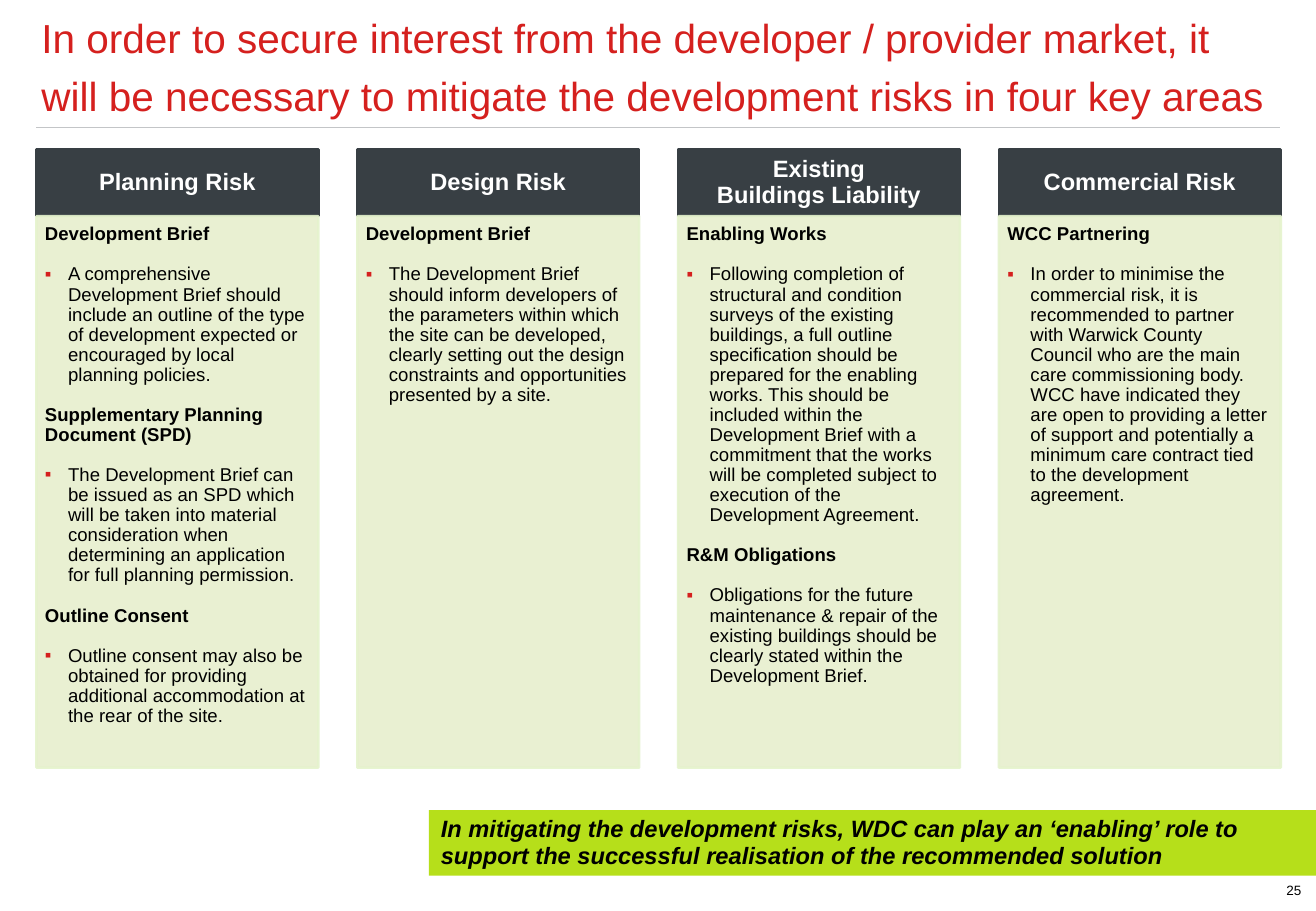
from lxml.etree import SubElement
from pptx import Presentation
from pptx.dml.color import RGBColor
from pptx.enum.shapes import MSO_CONNECTOR, MSO_SHAPE
from pptx.enum.text import MSO_ANCHOR, PP_ALIGN
from pptx.oxml.ns import qn
from pptx.util import Inches, Pt

RED = RGBColor(0xD5, 0x20, 0x1E)
SLATE = RGBColor(0x38, 0x3F, 0x44)
PALE = RGBColor(0xE1, 0xEB, 0xC0)
EDGE = RGBColor(0xE5, 0xF3, 0xCD)
LIME = RGBColor(0xB6, 0xDF, 0x1A)
GREY = RGBColor(0xC3, 0xC5, 0xC7)
WHITE = RGBColor(0xFF, 0xFF, 0xFF)
BLACK = RGBColor(0, 0, 0)

TITLE = ("In order to secure interest from the developer / provider market, it will be "
         "necessary to mitigate the development risks in four key areas")
CLAIM = ("In mitigating the development risks, WDC can play an ‘enabling’ role to "
         "support the successful realisation of the recommended solution")
RISKS = [
    ("Planning Risk", [
        ("Development Brief",
         "A comprehensive Development Brief should include an outline of the type of "
         "development expected or encouraged by local planning policies."),
        ("Supplementary Planning Document (SPD)",
         "The Development Brief can be issued as an SPD which will be taken into material "
         "consideration when determining an application for full planning permission."),
        ("Outline Consent",
         "Outline consent may also be obtained for providing additional accommodation at "
         "the rear of the site."),
    ]),
    ("Design Risk", [
        ("Development Brief",
         "The Development Brief should inform developers of the parameters within which "
         "the site can be developed, clearly setting out the design constraints and "
         "opportunities presented by a site."),
    ]),
    ("Existing\vBuildings Liability", [
        ("Enabling Works",
         "Following completion of structural and condition surveys of the existing "
         "buildings, a full outline specification should be prepared for the enabling "
         "works. This should be included within the Development Brief with a commitment "
         "that the works will be completed subject to execution of the Development "
         "Agreement."),
        ("R&M Obligations",
         "Obligations for the future maintenance & repair of the existing buildings "
         "should be clearly stated within the Development Brief."),
    ]),
    ("Commercial Risk", [
        ("WCC Partnering",
         "In order to minimise the commercial risk, it is recommended to partner with "
         "Warwick County Council who are the main care commissioning body. WCC have "
         "indicated they are open to providing a letter of support and potentially a "
         "minimum care contract tied to the development agreement."),
    ]),
]

LEFT, STEP, WIDTH = 0.3, 2.64, 2.32
HEAD_TOP, HEAD_TALL = 1.23, 0.55
BODY_TOP, BODY_TALL = 1.78, 4.54


def apply(item, values):
    for name, value in values.items():
        setattr(item, name, value)


def set_frame(shape, pads, anchor=MSO_ANCHOR.TOP):
    """Set wrapping, anchor and the left, top, right and bottom insets."""
    frame = shape.text_frame
    sides = ("left", "top", "right", "bottom")
    apply(frame, {f"margin_{side}": Inches(pad) for side, pad in zip(sides, pads)})
    apply(frame, {"word_wrap": True, "vertical_anchor": anchor})
    return frame


def write(para, text, size, color, font=None, layout=None):
    para.text = text
    apply(para, {"alignment": PP_ALIGN.LEFT, **(layout or {})})
    for run in para.runs:
        apply(run.font, {"name": "Arial", "size": Pt(size), **(font or {})})
        run.font.color.rgb = color
    for brk in para._p.findall(qn("a:br")):
        SubElement(brk, qn("a:rPr"), sz=str(size * 100))


def add_bullet(para):
    props = para._p.get_or_add_pPr()
    apply_indent = {"marL": Inches(0.19), "indent": -Inches(0.19)}
    for name, value in apply_indent.items():
        props.set(name, str(int(value)))
    tint = SubElement(props, qn("a:buClr"))
    SubElement(tint, qn("a:srgbClr"), val=str(RED))
    SubElement(props, qn("a:buFont"), typeface="Arial")
    SubElement(props, qn("a:buChar"), char="▪")


def fade(fill, percent):
    """Make a solid fill partly opaque."""
    for tint in fill.iter(qn("a:srgbClr")):
        SubElement(tint, qn("a:alpha"), val=str(percent * 1000))


def add_block(slide, box, color, edge=None):
    shape = slide.shapes.add_shape(MSO_SHAPE.RECTANGLE, *map(Inches, box))
    shape.shadow.inherit = False
    shape.fill.solid()
    shape.fill.fore_color.rgb = color
    if edge is None:
        shape.line.fill.background()
    else:
        shape.line.color.rgb = edge
        shape.line.width = Pt(1.5)
    return shape


def add_text(slide, box, pads, anchor=MSO_ANCHOR.TOP):
    shape = slide.shapes.add_textbox(*map(Inches, box))
    return set_frame(shape, pads, anchor)


def add_rule(slide, start, end):
    line = slide.shapes.add_connector(MSO_CONNECTOR.STRAIGHT, *map(Inches, start + end))
    line.line.color.rgb = GREY
    line.line.width = Pt(0.75)
    SubElement(line._element.spPr, qn("a:effectLst"))


def add_head(slide, left, text):
    shape = add_block(slide, (left, HEAD_TOP, WIDTH, HEAD_TALL), SLATE, SLATE)
    frame = set_frame(shape, (0.09, 0.05, 0.09, 0.05), MSO_ANCHOR.MIDDLE)
    write(frame.paragraphs[0], text, 14, WHITE, {"bold": True},
          {"alignment": PP_ALIGN.CENTER, "line_spacing": 0.9})


def add_body(slide, left, topics):
    shape = add_block(slide, (left, BODY_TOP, WIDTH, BODY_TALL), PALE, EDGE)
    props = shape._element.spPr
    fade(props.find(qn("a:solidFill")), 70)
    fade(props.find(qn("a:ln")), 90)
    frame = set_frame(shape, (0.07, 0.07, 0.09, 0.1))
    layout = {"line_spacing": 0.9, "space_after": Pt(12)}
    for place, (topic, detail) in enumerate(topics):
        para = frame.add_paragraph() if place else frame.paragraphs[0]
        write(para, topic, 11, BLACK, {"bold": True}, layout)
        para = frame.add_paragraph()
        add_bullet(para)
        write(para, detail, 11, BLACK, {"bold": False}, layout)


def main():
    deck = Presentation()
    apply(deck, {"slide_width": Inches(10.83), "slide_height": Inches(7.5)})
    slide = deck.slides.add_slide(deck.slide_layouts[6])

    add_rule(slide, (0.3, 1.05), (10.53, 1.05))
    title = add_text(slide, (0.29, 0.28, 10.25, 0.75), [0.05] * 4, MSO_ANCHOR.BOTTOM)
    write(title.paragraphs[0], TITLE, 24, RED, layout={"line_spacing": Pt(34)})

    for place, (risk, topics) in enumerate(RISKS):
        left = LEFT + place * STEP
        add_head(slide, left, risk)
        add_body(slide, left, topics)

    claim = add_block(slide, (3.53, 6.67, 7.3, 0.54), LIME)
    frame = set_frame(claim, (0.1, 0.05, 0.1, 0.05), MSO_ANCHOR.MIDDLE)
    write(frame.paragraphs[0], CLAIM, 14, BLACK, {"bold": True, "italic": True},
          {"line_spacing": 0.95})

    number = add_text(slide, (10.54, 7.21, 0.17, 0.23), (0, 0.05, 0, 0.05))
    write(number.paragraphs[0], "25", 8, BLACK, layout={"alignment": PP_ALIGN.RIGHT})
    deck.save("out.pptx")


if __name__ == "__main__":
    main()
